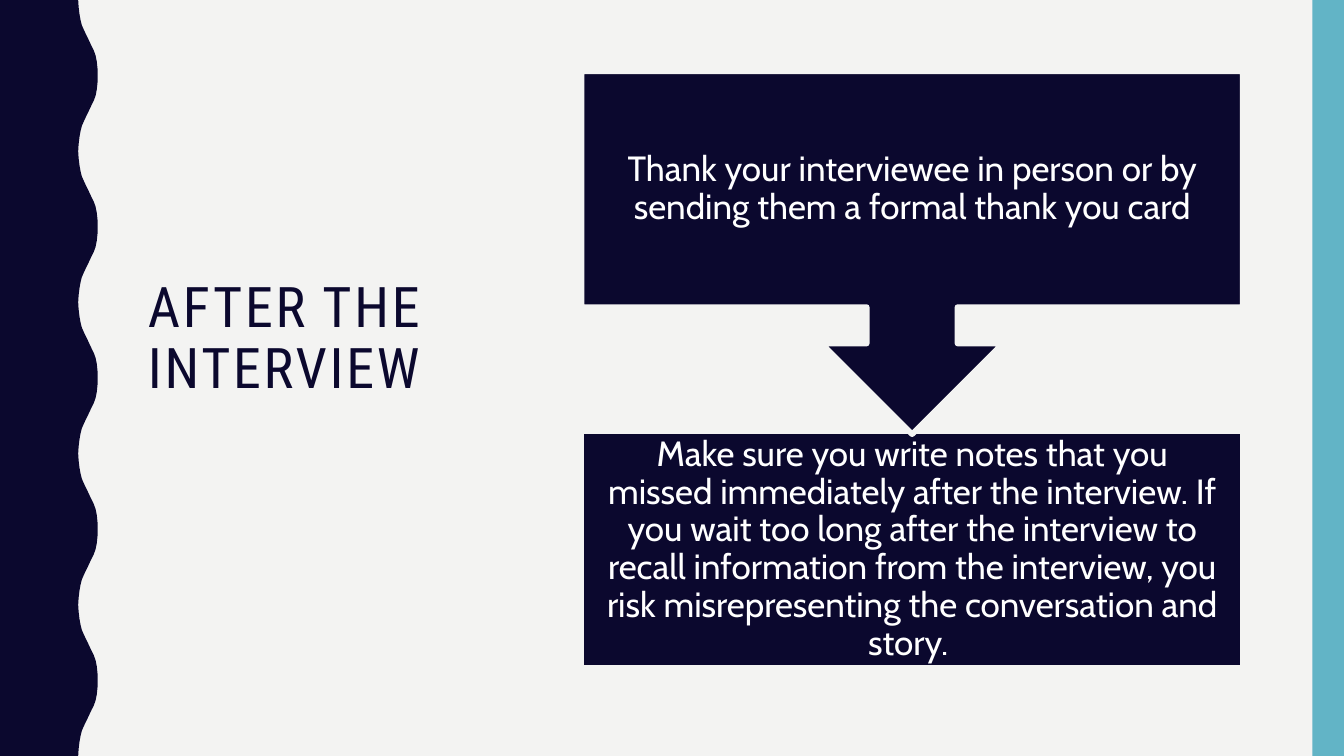
from pptx import Presentation
from pptx.dml.color import RGBColor
from pptx.enum import shapes, text
from pptx.util import Pt

COLORS = {"paper": "F3F3F2", "navy": "0B082E", "aqua": "62B4C6", "white": "FFFFFF"}
SLIDE_W, SLIDE_H = 960, 540
BOX_LEFT, BOX_W = 415.4, 472.3


def paint(shape, color, outline=None):
    """Give a shape a flat fill and either a 4 pt outline or none."""
    shape.shadow.inherit = False
    shape.fill.solid()
    shape.fill.fore_color.rgb = RGBColor.from_string(COLORS[color])
    if outline:
        shape.line.color.rgb = RGBColor.from_string(COLORS[outline])
        shape.line.width = Pt(4)
    else:
        shape.line.fill.background()


def write(shape, wording, font_name, size, color, align):
    frame = shape.text_frame
    frame.word_wrap = True
    frame.vertical_anchor = text.MSO_ANCHOR.MIDDLE
    frame.text = wording
    paragraph = frame.paragraphs[0]
    paragraph.alignment = align
    paragraph.line_spacing = 0.9
    run = paragraph.runs[0]
    run.font.name = font_name
    run.font.size = Pt(size)
    run.font.color.rgb = RGBColor.from_string(COLORS[color])
    return run


prs = Presentation()
prs.slide_width, prs.slide_height = Pt(SLIDE_W), Pt(SLIDE_H)
slide = prs.slides.add_slide(prs.slide_layouts[6])
slide.background.fill.solid()
slide.background.fill.fore_color.rgb = RGBColor.from_string(COLORS["paper"])

# Wavy left edge: half a wave, mirrored and repeated five times
half_wave = [(55.9, 0), (56.2, 5), (56.8, 10), (57.6, 14.4), (58.5, 18),
             (59.8, 21), (61.2, 24), (62.7, 27), (64.1, 30), (65.5, 33),
             (67, 36), (68.3, 39.6), (69.2, 44), (69.7, 49), (69.8, 54)]
period = 108
wave = half_wave + [(x, period - y) for x, y in reversed(half_wave[:-1])]
edge = [(x, y + n * period) for n in range(SLIDE_H // period) for x, y in wave]
outline = [(Pt(x), Pt(y)) for x, y in edge + [(0, SLIDE_H)]]
builder = slide.shapes.build_freeform(0, 0)
builder.add_line_segments(outline, close=True)
paint(builder.convert_to_shape(), "navy")

right_band = slide.shapes.add_shape(
    shapes.MSO_SHAPE.RECTANGLE, Pt(937.5), 0, Pt(22.5), Pt(SLIDE_H))
paint(right_band, "aqua")

title = slide.shapes.add_textbox(Pt(98.6), Pt(51), Pt(266.4), Pt(427))
title_run = write(title, "AFTER THE INTERVIEW", "Roboto Condensed", 40, "navy",
                  text.PP_ALIGN.LEFT)
title_run.font._element.set("spc", "200")
title.text_frame.margin_bottom = Pt(47)

steps = [
    (shapes.MSO_SHAPE.RECTANGLE, 308.2, 168.5,
     "Make sure you write notes that you missed immediately after the interview. "
     "If you wait too long after the interview to recall information from the "
     "interview, you risk misrepresenting the conversation and story. "),
    (shapes.MSO_SHAPE.DOWN_ARROW_CALLOUT, 51, 259.2,
     "Thank your interviewee in person or by sending them a formal thank you card"),
]
for kind, top, height, wording in steps:
    step = slide.shapes.add_shape(kind, Pt(BOX_LEFT), Pt(top), Pt(BOX_W), Pt(height))
    paint(step, "navy", "paper")
    write(step, wording, "Cabin", 25, "white", text.PP_ALIGN.CENTER)
    frame = step.text_frame
    frame.margin_left = frame.margin_right = Pt(13.7)
    frame.margin_top = frame.margin_bottom = Pt(13.7)

prs.save("out.pptx")
